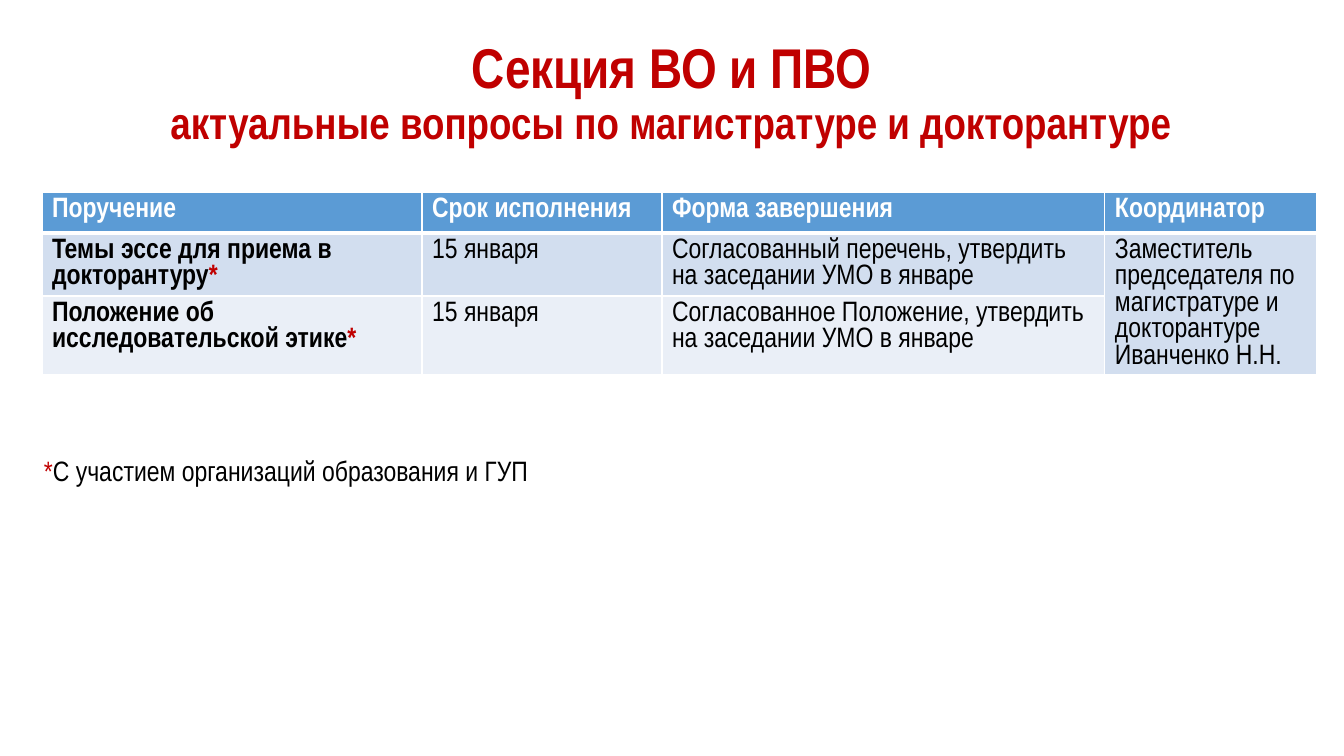
from lxml import etree
from pptx import Presentation
from pptx.dml.color import RGBColor
from pptx.enum.text import MSO_ANCHOR, MSO_AUTO_SIZE, PP_ALIGN
from pptx.oxml.ns import qn
from pptx.util import Emu, Pt

MIDDLE, CENTER = MSO_ANCHOR.MIDDLE, PP_ALIGN.CENTER
NO_FIT = MSO_AUTO_SIZE.NONE
FONT = "Arial Narrow"
RED, BLACK, WHITE = "C00000", "000000", "FFFFFF"
FILLS = ["5B9BD5", "D2DEEF", "EAEFF7"]  # one per table row

TITLE = [("Секция ВО и ПВО", 40),
         ("актуальные вопросы по магистратуре и докторантуре", 32)]
ROWS = [
    ["Поручение", "Срок исполнения", "Форма завершения", "Координатор"],
    ["Темы эссе для приема в докторантуру*", "15 января",
     "Согласованный перечень, утвердить на заседании УМО в январе",
     "Заместитель председателя по магистратуре и докторантуре Иванченко Н.Н."],
    ["Положение об исследовательской этике*", "15 января",
     "Согласованное Положение, утвердить на заседании УМО в январе", ""],
]
NOTE = "*С участием организаций образования и ГУП"

SLIDE = (1344, 756)
TITLE_BOX = (92, 40, 1159, 110)
TABLE_AT = (42, 192)
COLS = [380, 240, 443, 212]
HEIGHTS = [41, 63, 79]
NOTE_BOX = (34, 449, 1275, 44)


def px(n):
    return Emu(round(n * 914400 / 100.8))


def rgb(code):
    return RGBColor.from_string(code)


def add_run(para, text, size, color, bold):
    run = para.add_run()
    run.text = text
    font = run.font
    font.name, font.size, font.bold = FONT, Pt(size), bold
    font.color.rgb = rgb(color)


def add_starred(para, text, color=BLACK, bold=False):
    """Add 20 pt text, with its asterisk as a red run."""
    head, star, tail = text.partition("*")
    for part, tint in ((head, color), (star, RED), (tail, color)):
        if part:
            add_run(para, part, 20, tint, bold)


def add_edges(cell, top, bottom):
    """Draw white cell borders; top and bottom are widths in points."""
    props = cell._tc.get_or_add_tcPr()
    for tag, width in (("lnL", 1), ("lnR", 1), ("lnT", top), ("lnB", bottom)):
        line = etree.SubElement(props, qn("a:" + tag), w=str(Pt(width)))
        fill = etree.SubElement(line, qn("a:solidFill"))
        etree.SubElement(fill, qn("a:srgbClr"), val=WHITE)


def add_title(slide):
    title = slide.shapes.title
    title.left, title.top, title.width, title.height = map(px, TITLE_BOX)
    frame = title.text_frame
    frame.auto_size, frame.vertical_anchor = NO_FIT, MIDDLE
    para = frame.paragraphs[0]
    para.alignment, para.line_spacing = CENTER, 0.9
    for i, (text, size) in enumerate(TITLE):
        if i:
            para.add_line_break()
        add_run(para, text, size, RED, True)


def add_grid(slide):
    box = (*TABLE_AT, sum(COLS), sum(HEIGHTS))
    table = slide.shapes.add_table(len(ROWS), len(COLS), *map(px, box)).table
    for col, width in zip(table.columns, COLS):
        col.width = px(width)
    for row, height in zip(table.rows, HEIGHTS):
        row.height = px(height)
    table.cell(1, 3).merge(table.cell(2, 3))
    for r, row in enumerate(ROWS):
        for c, text in enumerate(row):
            cell = table.cell(r, c)
            add_edges(cell, 3 if r == 1 else 1, 3 if r == 0 else 1)
            cell.fill.solid()
            cell.fill.fore_color.rgb = rgb(FILLS[r])
            para = cell.text_frame.paragraphs[0]
            add_starred(para, text, BLACK if r else WHITE, r == 0 or c == 0)


def add_note(slide):
    frame = slide.shapes.add_textbox(*map(px, NOTE_BOX)).text_frame
    frame.word_wrap = True
    add_starred(frame.paragraphs[0], NOTE)


def main():
    deck = Presentation()
    deck.slide_width, deck.slide_height = map(px, SLIDE)
    slide = deck.slides.add_slide(deck.slide_layouts[5])
    add_title(slide)
    add_grid(slide)
    add_note(slide)
    deck.save("out.pptx")


if __name__ == "__main__":
    main()
